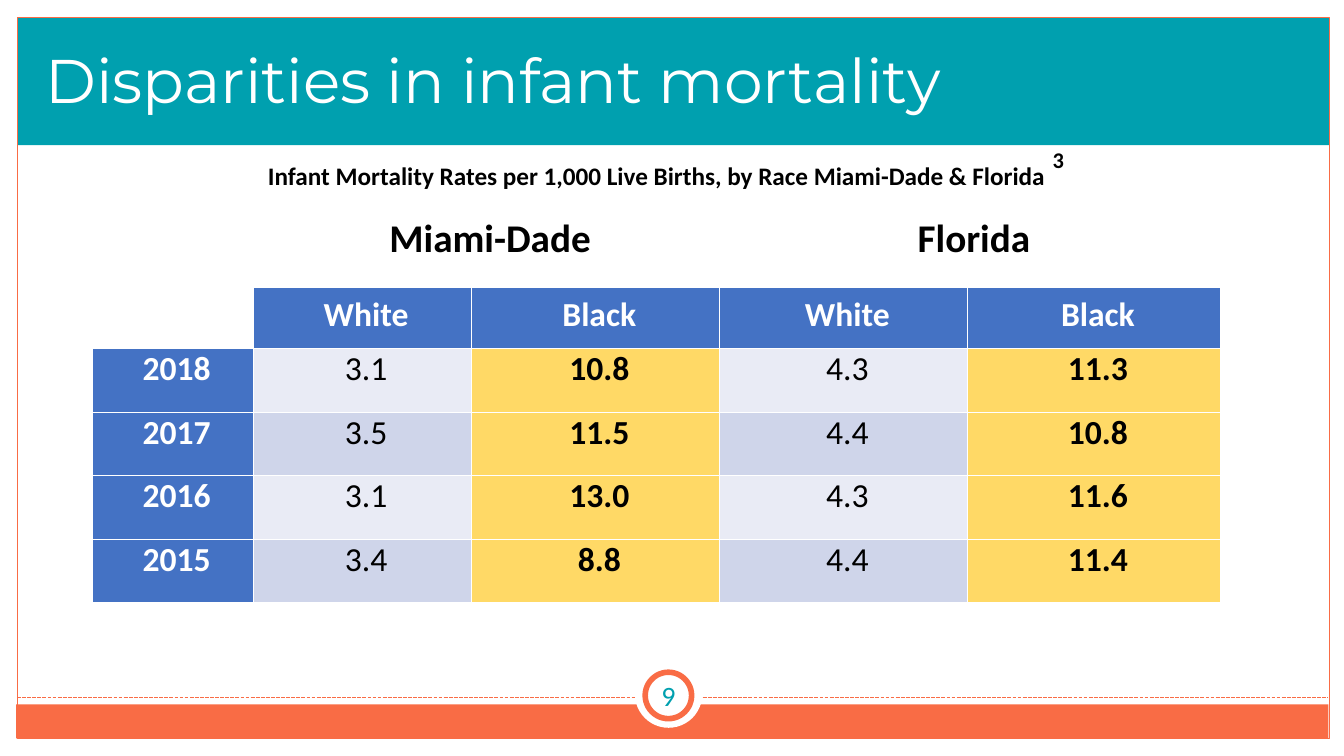
from dataclasses import dataclass

import lxml.etree
import pptx
import pptx.dml.color
import pptx.enum.dml
import pptx.enum.shapes
import pptx.enum.text
import pptx.oxml.ns
import pptx.util
from pptx.util import Cm, Pt

TEAL, ORANGE, WHITE, BLACK = "00A0AF", "F96C45", "FFFFFF", "000000"
HEADER_BLUE, HIGHLIGHT = "4472C4", "FFD966"
BANDS = ("E9EBF5", "CFD5EA")
SHAPE = pptx.enum.shapes.MSO_SHAPE
ALIGN = pptx.enum.text.PP_ALIGN
ANCHOR = pptx.enum.text.MSO_ANCHOR

COLUMN_WIDTHS = (4.04, 5.51, 6.25, 6.25, 6.38)
ROW_HEIGHTS = (1.68, 1.57, 1.6, 1.6, 1.6, 1.6)
REGIONS = ("Miami-Dade", "Florida")
RACES = ("White", "Black")
RATES = {
    "2018": ("3.1", "10.8", "4.3", "11.3"),
    "2017": ("3.5", "11.5", "4.4", "10.8"),
    "2016": ("3.1", "13.0", "4.3", "11.6"),
    "2015": ("3.4", "8.8", "4.4", "11.4"),
}


@dataclass
class Box:
    left: float
    top: float
    width: float
    height: float

    def lengths(self) -> tuple:
        return tuple(Cm(n) for n in (self.left, self.top, self.width, self.height))


@dataclass
class Decoration:
    kind: int
    box: Box
    fill: str = ""
    line: str = ""
    line_width: float = 0


@dataclass
class Label:
    text: str
    box: Box
    size: float
    color: str = BLACK
    bold: bool = True
    anchor: int = ANCHOR.TOP


BACKDROP = (
    Decoration(SHAPE.RECTANGLE, Box(0.43, 0.46, 33.07, 3.2), TEAL),
    Decoration(SHAPE.RECTANGLE, Box(0.41, 17.75, 33.07, 0.86), ORANGE),
    Decoration(SHAPE.RECTANGLE, Box(0.43, 0.43, 33.07, 18.19), "", ORANGE, 0.75),
)
PAGE_BADGE = (
    Decoration(SHAPE.OVAL, Box(16, 16.64, 1.7, 1.7), WHITE),
    Decoration(SHAPE.OVAL, Box(16.26, 16.94, 1.17, 1.17), WHITE, ORANGE, 4),
)
PAGE_NUMBER = Label("9", Box(15.77, 16.92, 2.16, 1.22), 20, TEAL, False, ANCHOR.MIDDLE)
CAPTIONS = (
    Label("3", Box(25.78, 3.56, 1.78, 0.94), 16),
    Label("Infant Mortality Rates per 1,000 Live Births, by Race Miami-Dade & Florida",
          Box(5.26, 3.91, 22.58, 1.02), 18),
)


def rgb(color: str) -> pptx.dml.color.RGBColor:
    return pptx.dml.color.RGBColor.from_string(color)


def paint(fill, color: str) -> None:
    """Fill with a solid colour, or with nothing when the colour is empty."""
    if color:
        fill.solid()
        fill.fore_color.rgb = rgb(color)
    else:
        fill.background()


def style(paragraph, size: float, color: str, bold: bool = False,
          font: str = "Calibri", align: int = ALIGN.CENTER) -> None:
    paragraph.alignment = align
    paragraph.font.name = font
    paragraph.font.size = Pt(size)
    paragraph.font.bold = bold
    paragraph.font.color.rgb = rgb(color)


def draw_decoration(slide, item: Decoration) -> None:
    shape = slide.shapes.add_shape(item.kind, *item.box.lengths())
    shape.shadow.inherit = False
    paint(shape.fill, item.fill)
    paint(shape.line.fill, item.line)
    if item.line:
        shape.line.width = Pt(item.line_width)


def draw_label(slide, label: Label) -> None:
    frame = slide.shapes.add_textbox(*label.box.lengths()).text_frame
    frame.word_wrap = True
    frame.vertical_anchor = label.anchor
    frame.text = label.text
    style(frame.paragraphs[0], label.size, label.color, label.bold)


def draw_footer_rule(slide) -> None:
    rule = slide.shapes.add_connector(
        pptx.enum.shapes.MSO_CONNECTOR.STRAIGHT, Cm(0.43), Cm(17.58), Cm(33.48), Cm(17.58))
    rule.line.color.rgb = rgb(ORANGE)
    rule.line.width = Pt(0.9)
    rule.line.dash_style = pptx.enum.dml.MSO_LINE.SQUARE_DOT
    lxml.etree.SubElement(rule.element.spPr, pptx.oxml.ns.qn("a:effectLst"))


def place_title(slide) -> None:
    title = slide.shapes.title
    title.left, title.top, title.width, title.height = Box(0.89, 0.76, 30.76, 2.31).lengths()
    title.element.getparent().append(title.element)
    title.text_frame.text = "Disparities in infant mortality"
    title.text_frame.vertical_anchor = ANCHOR.BOTTOM
    heading = title.text_frame.paragraphs[0]
    heading.line_spacing = 0.9
    style(heading, 44, WHITE, font="Montserrat", align=ALIGN.LEFT)


def add_borders(cell, bottom_width: float) -> None:
    """Draw white cell borders; call before the cell is filled."""
    properties = cell._tc.get_or_add_tcPr()
    for side in "LRTB":
        width = bottom_width if side == "B" else 1
        border = lxml.etree.SubElement(
            properties, pptx.oxml.ns.qn(f"a:ln{side}"), w=str(Pt(width)))
        solid = lxml.etree.SubElement(border, pptx.oxml.ns.qn("a:solidFill"))
        lxml.etree.SubElement(solid, pptx.oxml.ns.qn("a:srgbClr"), val=WHITE)


def write_cell(cell, text: str, size: float, color: str, bold: bool, anchor: int) -> None:
    cell.margin_left, cell.margin_right = Cm(0.69), Cm(0.51)
    cell.margin_top = cell.margin_bottom = Cm(0.33)
    cell.vertical_anchor = anchor
    cell.text = text
    paragraph = cell.text_frame.paragraphs[0]
    paragraph.line_spacing = Pt(13.5)
    style(paragraph, size, color, bold)


def draw_rates_table(slide) -> None:
    box = Box(2.34, 5.54, sum(COLUMN_WIDTHS), sum(ROW_HEIGHTS))
    table = slide.shapes.add_table(
        len(ROW_HEIGHTS), len(COLUMN_WIDTHS), *box.lengths()).table
    table.first_row = table.horz_banding = False
    for column, width in zip(table.columns, COLUMN_WIDTHS):
        column.width = Cm(width)
    for row, height in zip(table.rows, ROW_HEIGHTS):
        row.height = Cm(height)

    region_row = ("", REGIONS[0], "", REGIONS[1], "")
    race_row = ("", *RACES * len(REGIONS))
    rows = [region_row, race_row, *((year, *rates) for year, rates in RATES.items())]
    for r, texts in enumerate(rows):
        for c, text in enumerate(texts):
            cell = table.cell(r, c)
            add_borders(cell, 3 if r == 0 else 1)
            is_header = r == 1 or c == 0
            is_black_column = c > 0 and c % 2 == 0
            if r == 0 or not text:
                fill = ""
            elif is_header:
                fill = HEADER_BLUE
            else:
                fill = HIGHLIGHT if is_black_column else BANDS[r % 2]
            paint(cell.fill, fill)
            if text:
                write_cell(cell, text, 28 if r == 0 else 24,
                           WHITE if fill == HEADER_BLUE else BLACK,
                           r == 0 or is_header or is_black_column,
                           ANCHOR.BOTTOM if r == 1 else ANCHOR.MIDDLE)
    for c in (1, 3):
        table.cell(0, c).merge(table.cell(0, c + 1))


def main() -> None:
    deck = pptx.Presentation()
    deck.slide_width, deck.slide_height = Cm(33.87), Cm(19.05)
    slide = deck.slides.add_slide(deck.slide_layouts.get_by_name("Title Only"))
    for item in BACKDROP:
        draw_decoration(slide, item)
    draw_footer_rule(slide)
    for item in PAGE_BADGE:
        draw_decoration(slide, item)
    draw_label(slide, PAGE_NUMBER)
    place_title(slide)
    draw_rates_table(slide)
    for caption in CAPTIONS:
        draw_label(slide, caption)
    deck.save("out.pptx")


if __name__ == "__main__":
    main()
